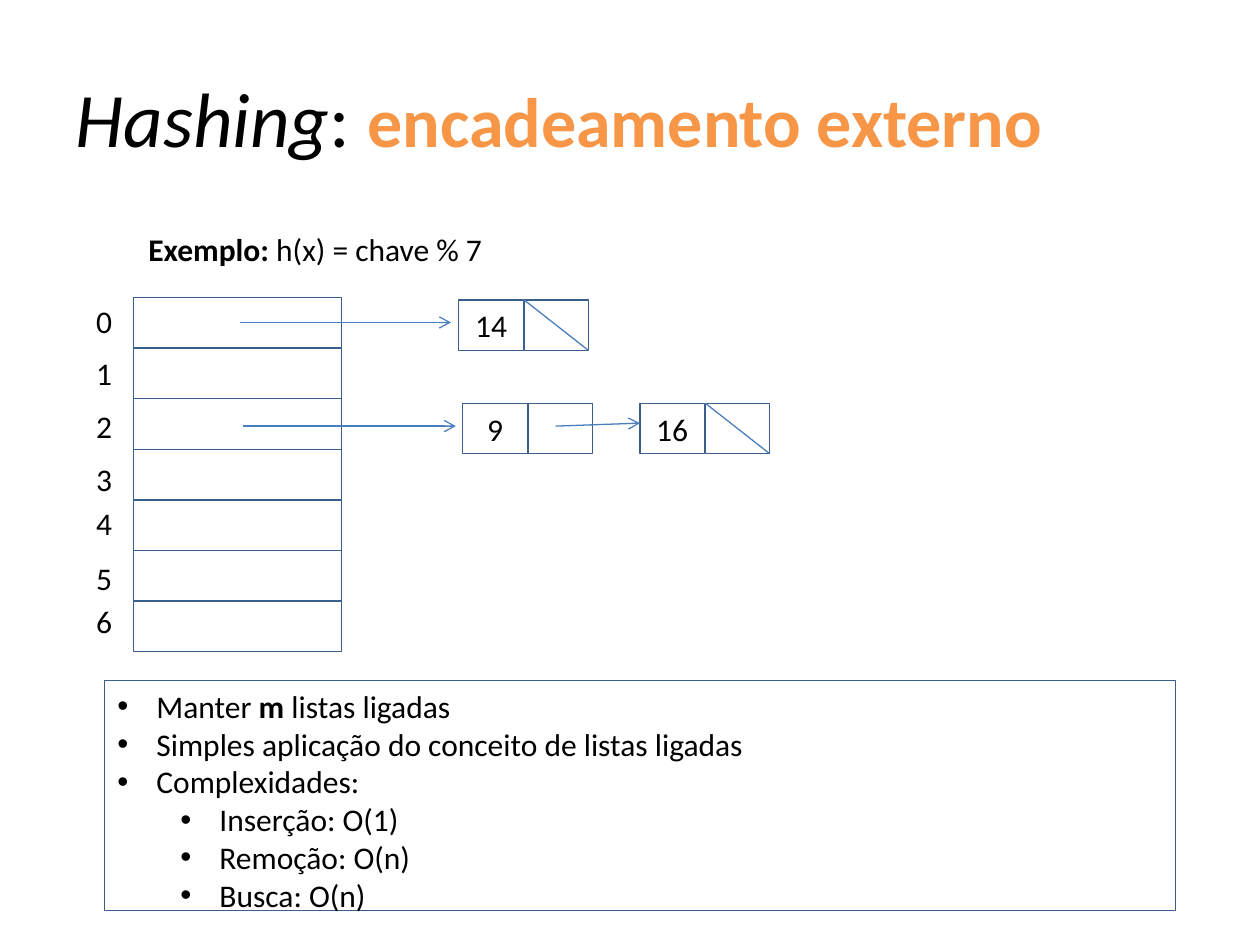
from dataclasses import dataclass

from lxml.etree import SubElement
from pptx import Presentation
from pptx.dml.color import RGBColor
from pptx.enum.shapes import MSO_CONNECTOR, MSO_SHAPE
from pptx.enum.text import MSO_ANCHOR, MSO_AUTO_SIZE, PP_ALIGN
from pptx.oxml.ns import qn
from pptx.util import Cm, Pt


@dataclass(frozen=True)
class Theme:
    font: str = "Calibri"
    text: RGBColor = RGBColor(0x00, 0x00, 0x00)
    accent: RGBColor = RGBColor(0xF7, 0x96, 0x46)
    outline: RGBColor = RGBColor(0x3A, 0x5F, 0x8C)
    arrow: RGBColor = RGBColor(0x4B, 0x7E, 0xBC)
    title_size: Pt = Pt(44)
    subtitle_size: Pt = Pt(40)
    body_size: Pt = Pt(18)
    line_width: Pt = Pt(0.75)


theme = Theme()


def add_runs(paragraph, runs, size=theme.body_size, color=theme.text):
    for text, bold, italic in runs:
        run = paragraph.add_run()
        run.text = text
        run.font.name = theme.font
        run.font.size = size
        run.font.color.rgb = color
        run.font.bold = bold
        run.font.italic = italic


def add_cell(left, top, width, text=""):
    shape = slide.shapes.add_shape(
        MSO_SHAPE.RECTANGLE, Cm(left), Cm(top), Cm(width), Cm(cell_height))
    shape.shadow.inherit = False
    shape.fill.background()
    shape.line.color.rgb = theme.outline
    shape.line.width = theme.line_width
    if text:
        paragraph = shape.text_frame.paragraphs[0]
        paragraph.alignment = PP_ALIGN.CENTER
        add_runs(paragraph, [(text, False, False)])


presentation = Presentation()
presentation.slide_width = Cm(25.4)
presentation.slide_height = Cm(19.05)
slide = presentation.slides.add_slide(presentation.slide_layouts[1])

title = slide.shapes.title
title.left, title.top, title.width, title.height = Cm(1.27), Cm(0.76), Cm(22.86), Cm(3.18)
title.text_frame.vertical_anchor = MSO_ANCHOR.MIDDLE
paragraph = title.text_frame.paragraphs[0]
paragraph.alignment = PP_ALIGN.LEFT
add_runs(paragraph, [("Hashing", False, True), (": ", False, False)], theme.title_size)
add_runs(paragraph, [("encadeamento externo", True, False)], theme.subtitle_size, theme.accent)

cell_height = 1.02
node_width = 1.3
table_left, table_top, table_width = 2.69, 6, 4.19

label_tops = [5.97, 7.01, 8.08, 9.14, 10.03, 11.15, 12.01]
text_boxes = [
    (1.45, top, node_width, PP_ALIGN.CENTER, [(str(index), False, False)])
    for index, top in enumerate(label_tops)
]
text_boxes.append((2.74, 4.52, 21.59, PP_ALIGN.LEFT,
                   [("Exemplo: ", True, False), ("h(x) = chave % 7", False, False)]))
for left, top, width, alignment, runs in text_boxes:
    text_box = slide.shapes.add_textbox(Cm(left), Cm(top), Cm(width), Cm(cell_height))
    text_box.text_frame.word_wrap = True
    text_box.text_frame.auto_size = MSO_AUTO_SIZE.SHAPE_TO_FIT_TEXT
    paragraph = text_box.text_frame.paragraphs[0]
    paragraph.alignment = alignment
    add_runs(paragraph, runs)

for index in range(len(label_tops)):
    add_cell(table_left, table_top + index * cell_height, table_width)

lines = [
    (4.83, 6.5, 9.09, 6.5, True),
    (4.9, 8.59, 9.19, 8.59, True),
    (11.2, 8.59, 12.9, 8.53, True),
]
nodes = [(9.25, 6.05, "14", True), (9.33, 8.13, "9", False), (12.9, 8.13, "16", True)]
for left, top, key, is_last in nodes:
    pointer_left = left + node_width + 0.02
    add_cell(left, top, node_width, key)
    add_cell(pointer_left, top, node_width)
    if is_last:
        lines.append((pointer_left, top, pointer_left + node_width, top + cell_height, False))

for start_x, start_y, end_x, end_y, has_arrow in lines:
    connector = slide.shapes.add_connector(
        MSO_CONNECTOR.STRAIGHT, Cm(start_x), Cm(start_y), Cm(end_x), Cm(end_y))
    connector.line.color.rgb = theme.arrow
    connector.line.width = theme.line_width
    if has_arrow:
        SubElement(connector.line._get_or_add_ln(), qn("a:tailEnd"), type="arrow")
    SubElement(connector._element.spPr, qn("a:effectLst"))

body = slide.placeholders[1]
body.left, body.top, body.width, body.height = Cm(2.11), Cm(13.72), Cm(21.59), Cm(4.88)
body.line.color.rgb = theme.outline
body.line.width = theme.line_width
body.text_frame.auto_size = MSO_AUTO_SIZE.SHAPE_TO_FIT_TEXT
items = [
    (0, [("Manter ", False, False), ("m", True, False), (" listas ligadas", False, False)]),
    (0, [("Simples aplicação do conceito de listas ligadas", False, False)]),
    (0, [("Complexidades:", False, False)]),
    (1, [("Inserção: O(1)", False, False)]),
    (1, [("Remoção: O(n)", False, False)]),
    (1, [("Busca: O(n)", False, False)]),
]
for index, (level, runs) in enumerate(items):
    paragraph = body.text_frame.add_paragraph() if index else body.text_frame.paragraphs[0]
    paragraph.level = level
    paragraph.space_before = Pt(0)
    properties = paragraph._p.get_or_add_pPr()
    properties.set("marL", str(Cm(0.79 + 1.27 * level)))
    properties.set("indent", str(Cm(-0.79)))
    SubElement(properties, qn("a:buFont"), typeface="Arial")
    SubElement(properties, qn("a:buChar"), char="•")
    add_runs(paragraph, runs)

presentation.save("out.pptx")
